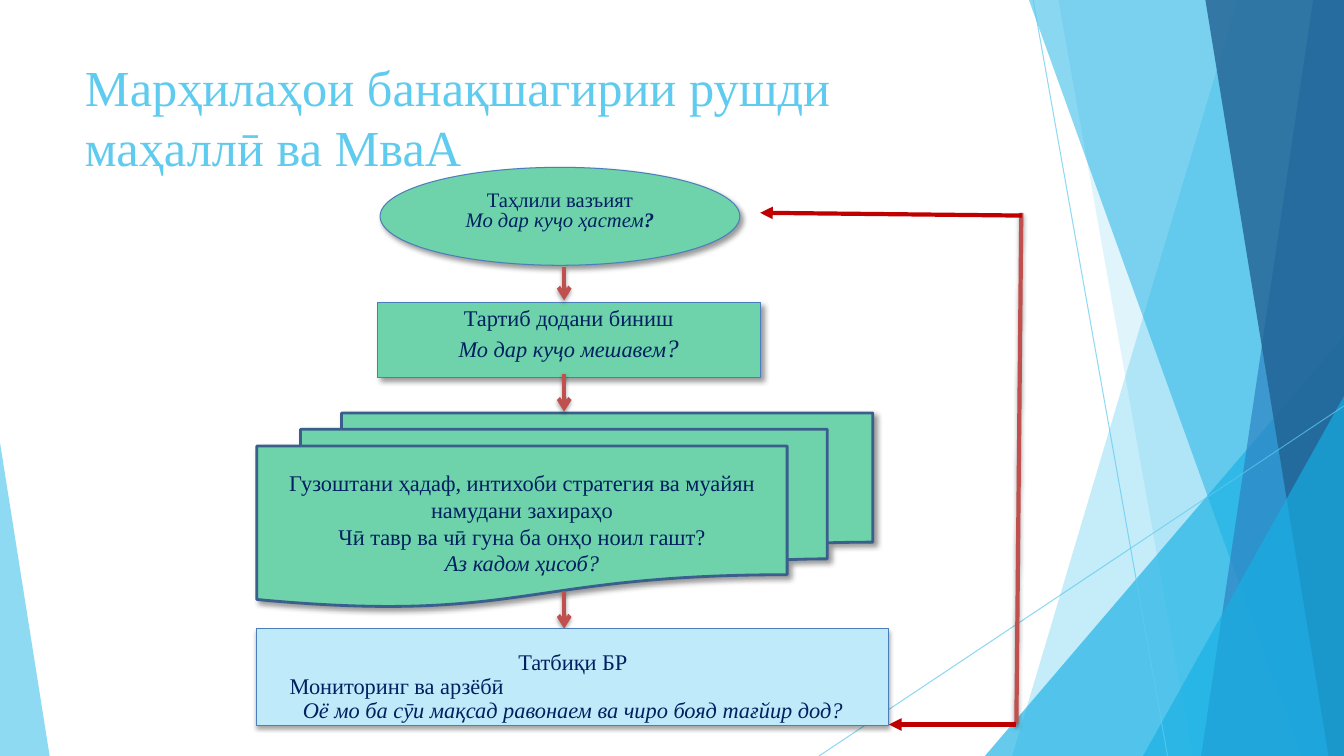
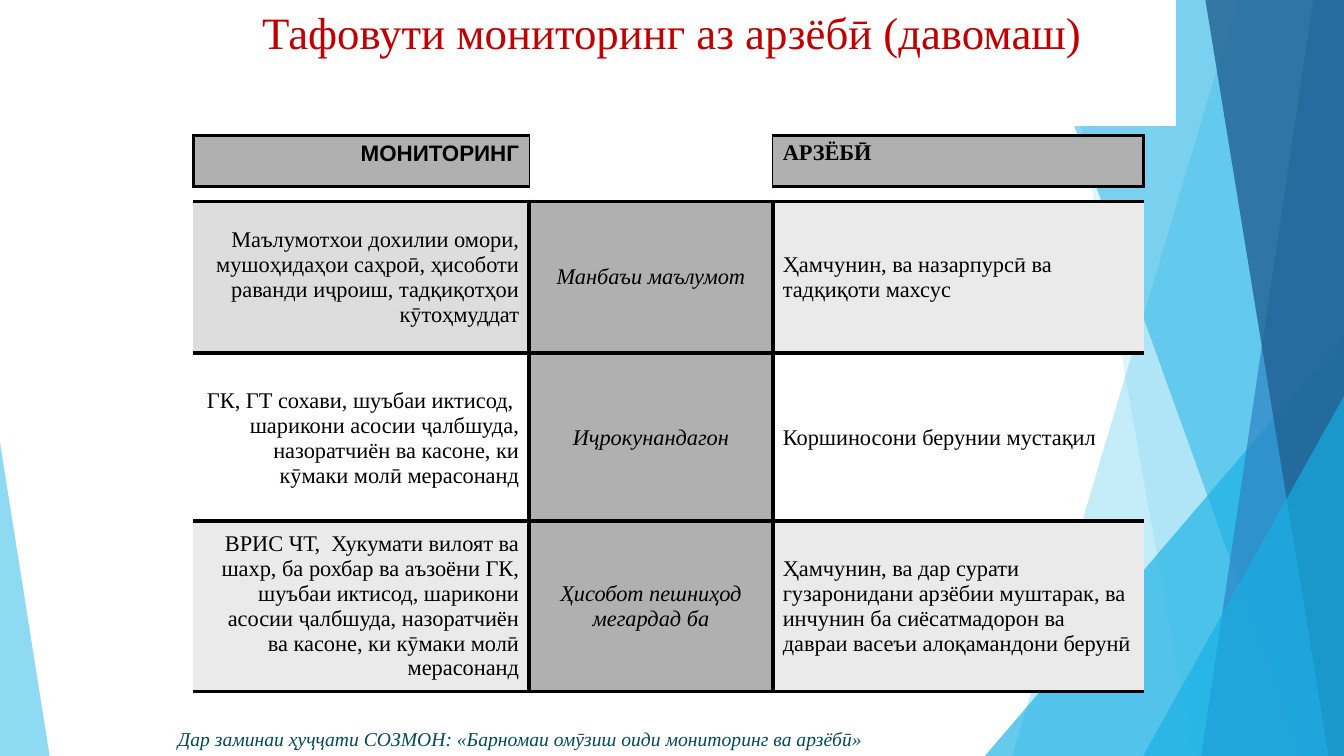
from lxml.etree import SubElement
from pptx import Presentation
from pptx.dml.color import RGBColor
from pptx.enum.shapes import MSO_CONNECTOR, MSO_SHAPE
from pptx.enum.text import MSO_ANCHOR, MSO_AUTO_SIZE, PP_ALIGN
from pptx.oxml.ns import qn
from pptx.util import Pt

HUES = {
    "sky": "5FCBEF", "azure": "17B0E4", "blue": "2E83C3", "deep": "226292",
    "green": "6ED2AA", "pale": "BFEAF9", "edge": "4B7EBC", "steel": "3A5F8C",
    "navy": "002060", "brick": "C0504D", "red": "C00000", "teal": "03495C",
    "black": "000000", "white": "FFFFFF",
    "grey": "B0B0B0", "mist": "DDDDDD", "light": "EAEAEA",
}
SERIF = "Times New Roman"
WIDE, HIGH = 960, 540
LEFT, MID, RIGHT = PP_ALIGN.LEFT, PP_ALIGN.CENTER, PP_ALIGN.RIGHT
# Shadows: opacity, blur, distance, angle
SLANT, DROP = (40, 4, 3, 45), (35, 3.1, 1.8, 90)


def pts(*nums):
    return [Pt(num) for num in nums]


class Deck:
    """Holds the style and the current slide."""

    def __init__(self):
        self.prs = Presentation()
        self.prs.slide_width, self.prs.slide_height = pts(WIDE, HIGH)
        self.slide = None

    def start(self, layout):
        self.slide = self.prs.slides.add_slide(self.prs.slide_layouts[layout])

    def hue(self, name):
        return RGBColor.from_string(HUES[name])

    # Look of shapes and lines
    def paint(self, shape, fill, line=None, width=0.75, alpha=None):
        shape.fill.solid()
        shape.fill.fore_color.rgb = self.hue(fill)
        if alpha:
            self.fade(shape, alpha)
        if line:
            shape.line.color.rgb = self.hue(line)
            shape.line.width = Pt(width)
        else:
            shape.line.fill.background()
        shape.shadow.inherit = False

    def fade(self, shape, alpha):
        tint = next(shape.element.iter(qn("a:srgbClr")))
        SubElement(tint, qn("a:alpha"), val=str(alpha * 1000))

    def shade(self, shape, look):
        alpha, blur, dist, angle = look
        glow = next(shape.element.iter(qn("a:effectLst")))
        cast = SubElement(glow, qn("a:outerShdw"), blurRad=str(Pt(blur)),
                          dist=str(Pt(dist)), dir=str(angle * 60000),
                          rotWithShape="0")
        tint = SubElement(cast, qn("a:srgbClr"), val=HUES["black"])
        SubElement(tint, qn("a:alpha"), val=str(alpha * 1000))

    def line(self, start, end, color, width=3, head=None, look=None,
             alpha=None, home=None):
        shapes = home or self.slide.shapes
        link = shapes.add_connector(MSO_CONNECTOR.STRAIGHT, *pts(*start, *end))
        link.line.color.rgb = self.hue(color)
        link.line.width = Pt(width)
        if alpha:
            self.fade(link, alpha)
        if head:
            SubElement(next(link.element.iter(qn("a:ln"))), qn("a:tailEnd"),
                       type=head)
        SubElement(link.element.find(qn("p:spPr")), qn("a:effectLst"))
        if look:
            self.shade(link, look)

    def block(self, kind, box, fill, line, look, width=0.75):
        shape = self.slide.shapes.add_shape(kind, *pts(*box))
        self.paint(shape, fill, line, width)
        self.shade(shape, look)
        return shape

    # Text
    def put(self, frame, lines, size, color="navy", align=LEFT, gap=1.0,
            font=SERIF, bold=False, slant=()):
        frame.text = "\n".join(lines)
        frame.word_wrap = True
        for row, para in enumerate(frame.paragraphs):
            para.alignment, para.line_spacing = align, gap
            para.space_before = para.space_after = Pt(0)
            for run in para.runs:
                self.style(run.font, size, color, font, bold, row in slant)

    def style(self, face, size, color, font, bold, slant):
        face.size, face.name = Pt(size), font
        face.bold, face.italic = bold, slant
        face.color.rgb = self.hue(color)

    def tail(self, para, text, size, bold=False):
        run = para.add_run()
        run.text = text
        self.style(run.font, size, "navy", SERIF, bold, True)

    def place(self, shape, box):
        shape.left, shape.top, shape.width, shape.height = pts(*box)

    def title(self, text, box, size, color, anchor):
        head = self.slide.shapes.title
        self.place(head, box)
        self.put(head.text_frame, [text], size, color)
        head.text_frame.auto_size = MSO_AUTO_SIZE.NONE
        head.text_frame.vertical_anchor = anchor
        return head

    def oval(self, box, lines):
        """Turn the body placeholder into the first step of the flow."""
        body = self.slide.placeholders[1]
        self.place(body, box)
        geom = SubElement(body.element.find(qn("p:spPr")), qn("a:prstGeom"),
                          prst="ellipse")
        SubElement(geom, qn("a:avLst"))
        self.paint(body, "green", "edge")
        self.shade(body, SLANT)
        frame = body.text_frame
        self.put(frame, lines, 14.7, align=MID, gap=0.8, slant=(1,))
        for prop in body.element.iter(qn("a:pPr")):
            prop.set("marL", "0")
            prop.set("indent", "0")
            SubElement(prop, qn("a:buNone"))
        frame.auto_size = MSO_AUTO_SIZE.NONE
        frame.vertical_anchor = MSO_ANCHOR.MIDDLE
        frame.margin_bottom = Pt(10)
        return frame

    def note(self, text, box, size, color):
        area = self.slide.shapes.add_textbox(*pts(*box))
        self.put(area.text_frame, [text], size, color, slant=(0,))

    # Tables
    def grid(self, top, high, wides):
        box = pts(138, top, sum(wides), high)
        table = self.slide.shapes.add_table(1, len(wides), *box).table
        table.first_row = table.horz_banding = False
        for col, wide in zip(table.columns, wides):
            col.width = Pt(wide)
        table.rows[0].height = Pt(high)
        return table.rows[0].cells

    def cell(self, cell, fill, rims):
        """Rims give the widths of the left, right, top and bottom borders."""
        props = cell._tc.get_or_add_tcPr()
        for side, width in zip("LRTB", rims):
            rim = SubElement(props, qn("a:ln" + side), w=str(Pt(width)))
            if width:
                ink = SubElement(rim, qn("a:solidFill"))
                SubElement(ink, qn("a:srgbClr"), val=HUES["black"])
            else:
                SubElement(rim, qn("a:noFill"))
        if fill:
            cell.fill.solid()
            cell.fill.fore_color.rgb = self.hue(fill)
        else:
            cell.fill.background()

    # Shared backdrop, kept on the master
    def backdrop(self):
        group = self.slide.shapes.add_group_shape()
        home = group.shapes

        def band(top, foot, fill, alpha):
            pen = home.build_freeform(*pts(top, 0), scale=1.0)
            pen.add_line_segments([pts(WIDE, 0), pts(WIDE, HIGH),
                                   pts(foot, HIGH)], close=True)
            self.paint(pen.convert_to_shape(), fill, alpha=alpha)

        def wedge(left, top, wide, peak, fill, alpha):
            shape = home.add_shape(MSO_SHAPE.ISOSCELES_TRIANGLE,
                                   *pts(left, top, wide, HIGH - top))
            shape.adjustments[0] = peak
            self.paint(shape, fill, alpha=alpha)

        for start, end in (((738, 0), (834, HIGH)), ((WIDE, 290), (585, HIGH))):
            self.line(start, end, "sky", 0.75, alpha=70, home=home)
        band(884, 723, "sky", 36)
        band(756, 852, "sky", 20)
        wedge(703.5, 240, 256.5, 1, "azure", 66)
        band(735, 929.5, "azure", 50)
        band(938, 858, "blue", 70)
        band(861, 949, "deep", 80)
        wedge(816.5, 283, 143.5, 1, "azure", 66)
        wedge(0, 316, 35.5, 0, "sky", 70)
        for num, tag in enumerate(group.element.iter(qn("p:cNvPr")), 100):
            tag.set("id", str(num))
        self.prs.slide_master.shapes.element.insert(2, group.element)


def flow(deck):
    deck.title("Марҳилаҳои банақшагирии рушди маҳаллӣ ва МваА",
               (53.5, 31, 677, 104), 36, "sky", MSO_ANCHOR.MIDDLE)

    # Steps
    frame = deck.oval((271.5, 119.5, 257, 70),
                      ["Таҳлили вазъият", "Мо дар куҷо ҳастем"])
    deck.tail(frame.paragraphs[1], "?", 14.7, True)

    view = deck.block(MSO_SHAPE.RECTANGLE, (269.5, 216, 273.5, 53.5),
                      "green", "edge", SLANT).text_frame
    deck.put(view, ["Тартиб додани биниш", "Мо дар куҷо мешавем"], 16,
             align=MID, gap=1.05, slant=(1,))
    deck.tail(view.paragraphs[1], "?", 18)
    view.vertical_anchor = MSO_ANCHOR.TOP
    view.margin_top = Pt(0)

    goals = deck.block(MSO_SHAPE.FLOWCHART_MULTIDOCUMENT,
                       (183.5, 295, 440, 138.5), "green", "steel", SLANT, 2)
    deck.put(goals.text_frame, [
        "Гузоштани ҳадаф, интихоби стратегия ва муайян намудани захираҳо",
        "Чӣ тавр ва чӣ гуна ба онҳо ноил гашт?",
        "Аз кадом ҳисоб?"], 16, align=MID, slant=(2,))
    goals.text_frame.vertical_anchor = MSO_ANCHOR.MIDDLE

    # Arrows between steps and the way back
    deck.line((729.5, 152), (726, 517.5), "brick", look=DROP)
    for top, foot in ((191, 214.5), (267, 294), (422, 449)):
        deck.line((403, top), (403, foot), "brick", head="arrow", look=DROP)

    work = deck.block(MSO_SHAPE.RECTANGLE, (183.5, 449, 451.5, 69),
                      "pale", "edge", DROP).text_frame
    deck.put(work, ["Татбиқи БР", "Мониторинг ва арзёбӣ",
                    "Оё мо ба сӯи мақсад равонаем ва чиро бояд тағйир дод?"],
             16, align=MID, gap=0.9, slant=(2,))
    work.paragraphs[1].alignment = LEFT
    work.vertical_anchor = MSO_ANCHOR.BOTTOM
    work.margin_left = work.margin_right = Pt(23.5)
    work.margin_bottom = Pt(1)

    deck.line((730, 154), (543, 152), "red", head="triangle")
    deck.line((726, 517.5), (635, 517.5), "red", head="triangle")


def contrast(deck):
    wides = (240, 174, 265)
    sides = (RIGHT, MID, LEFT)

    # Body rows: top, height, fills of the outer cells, texts
    rows = (
        (144, 108, "mist", "light",
         ("Маълумотхои дохилии омори, мушоҳидаҳои саҳроӣ, ҳисоботи раванди "
          "иҷроиш, тадқиқотҳои кӯтоҳмуддат",
          "Манбаъи маълумот",
          "Ҳамчунин, ва назарпурсӣ ва тадқиқоти махсус")),
        (252, 122, None, None,
         ("ГК, ГТ сохави, шуъбаи иктисод,  шарикони асосии ҷалбшуда, "
          "назоратчиён ва касоне, ки кӯмаки молӣ мерасонанд",
          "Иҷрокунандагон",
          "Коршиносони берунии мустақил")),
        (372, 122, "light", "light",
         ("ВРИС ЧТ,  Хукумати вилоят ва шахр, ба рохбар ва аъзоёни ГК, "
          "шуъбаи иктисод, шарикони асосии ҷалбшуда, назоратчиён ва касоне, "
          "ки кӯмаки молӣ мерасонанд",
          "Ҳисобот пешниҳод мегардад ба",
          "Ҳамчунин, ва дар сурати гузаронидани арзёбии муштарак, ва инчунин "
          "ба сиёсатмадорон ва давраи васеъи алоқамандони берунӣ")),
    )
    rims = ((0, 3, 3, 3), (3, 3, 3, 3), (3, 0, 3, 3))
    for top, high, first, last, texts in rows:
        cells = deck.grid(top, high, wides)
        fills = (first, "grey", last)
        for col, (cell, text) in enumerate(zip(cells, texts)):
            deck.cell(cell, fills[col], rims[col])
            deck.put(cell.text_frame, [text], 16, "black", sides[col],
                     slant=(0,) if col == 1 else ())
            cell.vertical_anchor = MSO_ANCHOR.MIDDLE

    # Header
    left, gap, right = deck.grid(97, 36, wides)
    deck.cell(left, "grey", (2.25, 1, 2.25, 2.25))
    deck.cell(gap, None, (1, 1, 0, 0))
    deck.cell(right, "grey", (1, 2.25, 2.25, 2.25))
    deck.put(left.text_frame, ["МОНИТОРИНГ"], 16, "black", RIGHT,
             font="Arial", bold=True)
    deck.put(right.text_frame, ["АРЗЁБӢ"], 16, "black", bold=True)

    # Source line and title
    deck.note("Дар заминаи ҳуҷҷати СОЗМОН: «Барномаи омӯзиш оиди мониторинг "
              "ва арзёбӣ»", (120, 515.5, 612, 24.5), 14, "teal")
    head = deck.title("Тафовути мониторинг аз арзёбӣ (давомаш)",
                      (180, 0, 660, 90), 32, "red", MSO_ANCHOR.TOP)
    deck.paint(head, "white")


def main():
    deck = Deck()
    deck.start(1)
    deck.backdrop()
    flow(deck)
    deck.start(5)
    contrast(deck)
    deck.prs.save("out.pptx")


if __name__ == "__main__":
    main()
